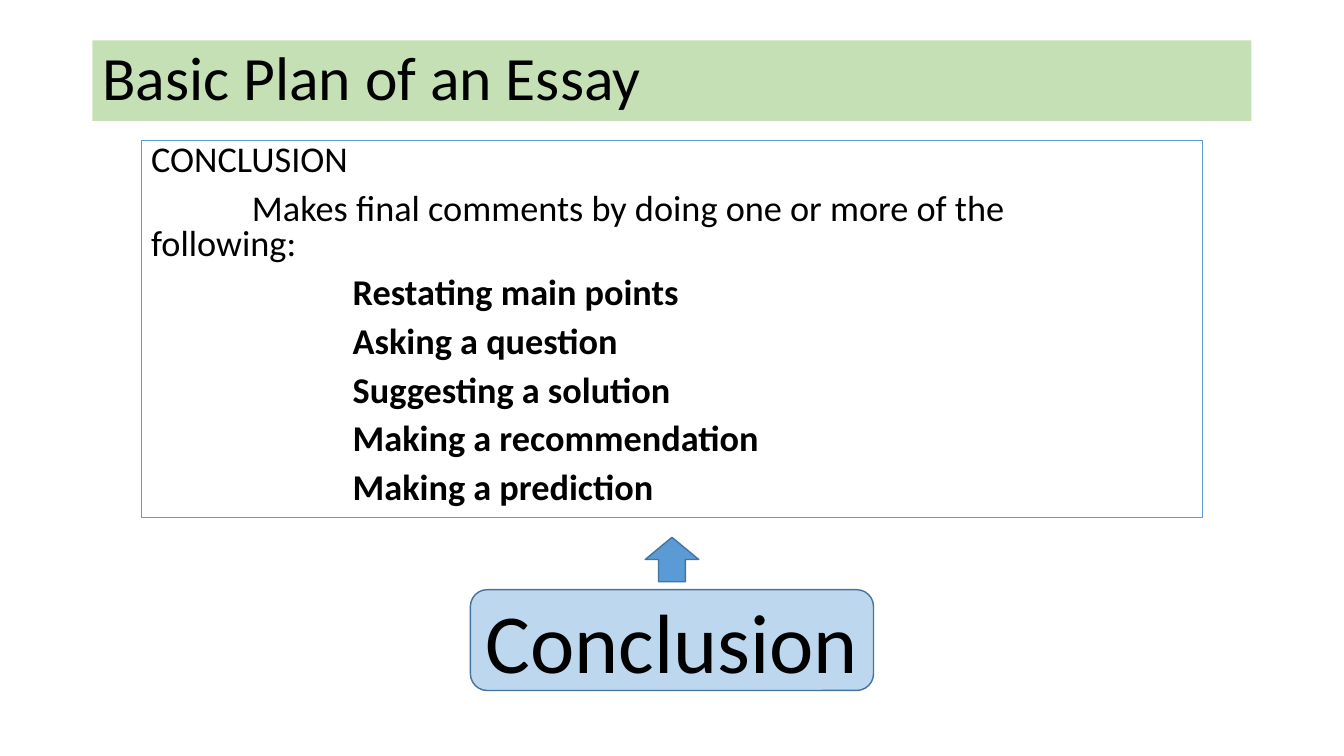
"""Build the essay plan slide about the conclusion."""
from pptx import Presentation
from pptx import util as u
from pptx.dml.color import RGBColor
from pptx.enum import shapes, text

TITLE = "Basic Plan of an Essay"
HEADING = "CONCLUSION"
LEAD = "Makes final comments by doing one or more of the\vfollowing:"
WAYS = ["Restating main points", "Asking a question", "Suggesting a solution",
        "Making a recommendation", "Making a prediction"]
LABEL = "Conclusion"

FONT = "Calibri"
BLACK, GREEN, PALE_BLUE = "000000", "C5E0B4", "BDD7EE"
BLUE, DARK_BLUE = "5B9BD5", "43739E"
WIDTH, HEIGHT = 33.87, 19.05
TAB = 2.54
KINDS = shapes.MSO_SHAPE


def colour(value):
    return RGBColor.from_string(value)


def add_box(page, kind, top, width, height, fill=None, line=None, weight=1):
    left = (WIDTH - width) / 2
    box = page.shapes.add_shape(kind, u.Cm(left), u.Cm(top), u.Cm(width), u.Cm(height))
    box.shadow.inherit = False
    if fill:
        box.fill.solid()
        box.fill.fore_color.rgb = colour(fill)
    else:
        box.fill.background()
    if line:
        box.line.color.rgb = colour(line)
        box.line.width = u.Pt(weight)
    else:
        box.line.fill.background()
    return box


def write(box, lines, size, spacing=1.0, align=text.PP_ALIGN.LEFT,
          anchor=text.MSO_ANCHOR.MIDDLE):
    frame = box.text_frame
    frame.word_wrap = True
    frame.vertical_anchor = anchor
    for number, (words, margin, indent, bold) in enumerate(lines):
        para = frame.add_paragraph() if number else frame.paragraphs[0]
        para.text = words
        para.alignment = align
        para.line_spacing = spacing
        para.space_before = u.Pt(10 if number else 0)
        properties = para._p.get_or_add_pPr()
        properties.set("marL", str(u.Cm(margin)))
        properties.set("indent", str(u.Cm(indent)))
        for span in para.runs:
            span.font.name = FONT
            span.font.size = u.Pt(size)
            span.font.bold = bold
            span.font.color.rgb = colour(BLACK)


def main():
    deck = Presentation()
    deck.slide_width, deck.slide_height = u.Cm(WIDTH), u.Cm(HEIGHT)
    page = deck.slides.add_slide(deck.slide_layouts[6])

    title = add_box(page, KINDS.RECTANGLE, 1.02, 29.21, 2.03, fill=GREEN)
    write(title, [(TITLE, 0, 0, False)], 44, 0.9)

    body = add_box(page, KINDS.RECTANGLE, 3.53, 26.75, 9.52, line=BLUE, weight=0.75)
    lines = [(HEADING, 0, 0, False), (LEAD, 0, TAB, False)]
    lines += [(way, 2 * TAB, 0, True) for way in WAYS]
    write(body, lines, 25.9, 0.8, anchor=text.MSO_ANCHOR.TOP)

    label = add_box(page, KINDS.ROUNDED_RECTANGLE, 14.86, 10.16, 2.54, PALE_BLUE, DARK_BLUE)
    write(label, [(LABEL, 0, 0, False)], 60, align=text.PP_ALIGN.CENTER)

    add_box(page, KINDS.UP_ARROW, 13.54, 1.35, 1.12, BLUE, DARK_BLUE)
    deck.save("out.pptx")


if __name__ == "__main__":
    main()
